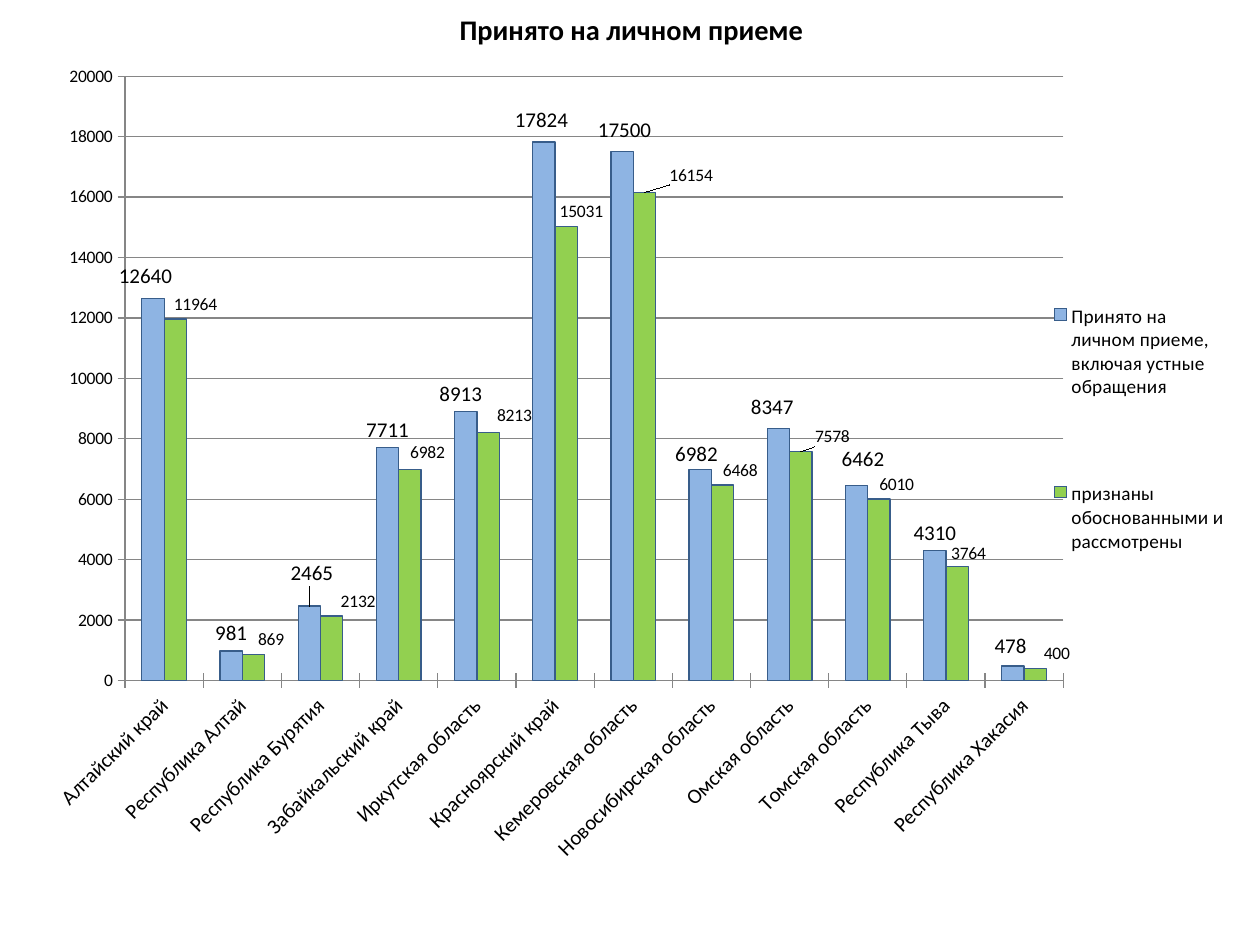
from dataclasses import dataclass

import pptx
import pptx.chart.data
import pptx.dml.color
import pptx.enum.chart
import pptx.enum.text
import pptx.oxml
import pptx.oxml.ns
import pptx.util
from pptx.util import Inches, Pt


@dataclass(frozen=True)
class Theme:
    font: str = "Calibri"
    text: str = "000000"
    received: str = "8EB4E3"
    upheld: str = "92D050"
    outline: str = "385D8A"
    grid: str = "868686"
    title_size: float = 16.2
    large: float = 12
    legend: float = 11
    small: float = 10


THEME = Theme()
CHART_WIDTH, CHART_HEIGHT = 9.45, 6.59

REGIONS = [
    "Алтайский край", "Республика Алтай", "Республика Бурятия",
    "Забайкальский край", "Иркутская область", "Красноярский край",
    "Кемеровская область", "Новосибирская область", "Омская область",
    "Томская область", "Республика Тыва", "Республика Хакасия",
]
RECEIVED = [12640, 981, 2465, 7711, 8913, 17824, 17500, 6982, 8347, 6462, 4310, 478]
UPHELD = [11964, 869, 2132, 6982, 8213, 15031, 16154, 6468, 7578, 6010, 3764, 400]

# Label shifts from the bar end, in inches: region index -> (right, down)
RECEIVED_SHIFTS = {
    0: (-0.06, -0.04), 2: (0.02, -0.12), 4: (-0.04, 0), 5: (-0.02, -0.03),
    6: (0.02, -0.03), 7: (-0.03, 0.02), 8: (-0.05, -0.03), 9: (0.05, -0.07),
    11: (-0.02, -0.02),
}
UPHELD_SHIFTS = {
    0: (0.16, 0), 1: (0.14, 0), 2: (0.21, 0), 3: (0.14, -0.02),
    4: (0.21, -0.02), 5: (0.12, 0), 6: (0.37, -0.02), 7: (0.14, 0),
    8: (0.25, 0), 9: (0.14, 0), 10: (0.09, 0.01), 11: (0.17, 0),
}


def rgb(value):
    return pptx.dml.color.RGBColor.from_string(value)


def style_font(font, size, bold=False):
    font.name = THEME.font
    font.size = Pt(size)
    font.bold = bold
    font.color.rgb = rgb(THEME.text)


def style_line(line, color):
    line.color.rgb = rgb(color)
    line.width = Pt(0.75)


def set_layout(element, index, **settings):
    """Give a chart part a manual layout, as fractions of the chart."""
    for old in element.findall(pptx.oxml.ns.qn("c:layout")):
        element.remove(old)
    values = "".join(f'<c:{key} val="{value}"/>' for key, value in settings.items())
    element.insert(index, pptx.oxml.parse_xml(
        f'<c:layout {pptx.oxml.ns.nsdecls("c")}>'
        f"<c:manualLayout>{values}</c:manualLayout></c:layout>"))


def add_title(slide, text):
    title = slide.shapes.title
    title.left, title.top = Inches(0.51), Inches(0.1)
    title.width, title.height = Inches(9), Inches(0.6)
    frame = title.text_frame
    frame.text = text
    frame.margin_top = frame.margin_bottom = 0
    frame.vertical_anchor = pptx.enum.text.MSO_ANCHOR.TOP
    para = frame.paragraphs[0]
    para.alignment = pptx.enum.text.PP_ALIGN.CENTER
    style_font(para.runs[0].font, THEME.title_size, bold=True)


def style_series(series, color, label_size, shifts):
    series.format.fill.solid()
    series.format.fill.fore_color.rgb = rgb(color)
    style_line(series.format.line, THEME.outline)
    outside = pptx.enum.chart.XL_LABEL_POSITION.OUTSIDE_END
    labels = series.data_labels
    labels.show_value = True
    labels.position = outside
    style_font(labels.font, label_size)
    for index, (right, down) in shifts.items():
        label = series.points[index].data_label
        style_font(label.font, label_size)
        label.position = outside
        element = series._element.xpath(f'.//c:dLbl[c:idx/@val="{index}"]')[0]
        set_layout(element, 1, x=round(right / CHART_WIDTH, 4),
                   y=round(down / CHART_HEIGHT, 4))


def style_axes(chart):
    cross = pptx.enum.chart.XL_TICK_MARK.CROSS
    for axis, size in ((chart.category_axis, THEME.large),
                       (chart.value_axis, THEME.small)):
        axis.major_tick_mark = cross
        style_font(axis.tick_labels.font, size)
        style_line(axis.format.line, THEME.grid)
    body = chart.category_axis._element.xpath("c:txPr/a:bodyPr")[0]
    body.set("rot", str(-45 * 60000))
    body.set("vert", "horz")
    values = chart.value_axis
    values.minimum_scale, values.maximum_scale, values.major_unit = 0, 20000, 2000
    values.has_major_gridlines = True
    style_line(values.major_gridlines.format.line, THEME.grid)


def add_legend(chart):
    chart.has_legend = True
    legend = chart.legend
    legend.position = pptx.enum.chart.XL_LEGEND_POSITION.RIGHT
    legend.include_in_layout = False
    style_font(legend.font, THEME.legend)
    set_layout(legend._element, 1, xMode="edge", yMode="edge",
               x=0.845, y=0.2, w=0.15, h=0.5)


def add_reception_chart(slide):
    data = pptx.chart.data.CategoryChartData()
    data.categories = REGIONS
    data.add_series("Принято на личном приеме, включая устные обращения", RECEIVED)
    data.add_series("признаны обоснованными и рассмотрены", UPHELD)
    chart = slide.shapes.add_chart(
        pptx.enum.chart.XL_CHART_TYPE.COLUMN_CLUSTERED, Inches(0.35), Inches(0.44),
        Inches(CHART_WIDTH), Inches(CHART_HEIGHT), data).chart
    chart.has_title = False
    style_font(chart.font, THEME.small)
    plot = chart.plots[0]
    plot.vary_by_categories = False
    plot.gap_width, plot.overlap = 150, 0
    received, upheld = plot.series
    style_series(received, THEME.received, THEME.large, RECEIVED_SHIFTS)
    style_series(upheld, THEME.upheld, THEME.small, UPHELD_SHIFTS)
    style_axes(chart)
    add_legend(chart)
    plot_area = chart._chartSpace.xpath("c:chart/c:plotArea")[0]
    set_layout(plot_area, 0, layoutTarget="inner", xMode="edge", yMode="edge",
               x=0.068, y=0.025, w=0.788, h=0.728)


def main():
    deck = pptx.Presentation()
    deck.slide_width, deck.slide_height = Inches(10), Inches(7.5)
    slide = deck.slides.add_slide(deck.slide_layouts[5])
    add_title(slide, "Принято на личном приеме")
    add_reception_chart(slide)
    deck.save("out.pptx")


if __name__ == "__main__":
    main()
